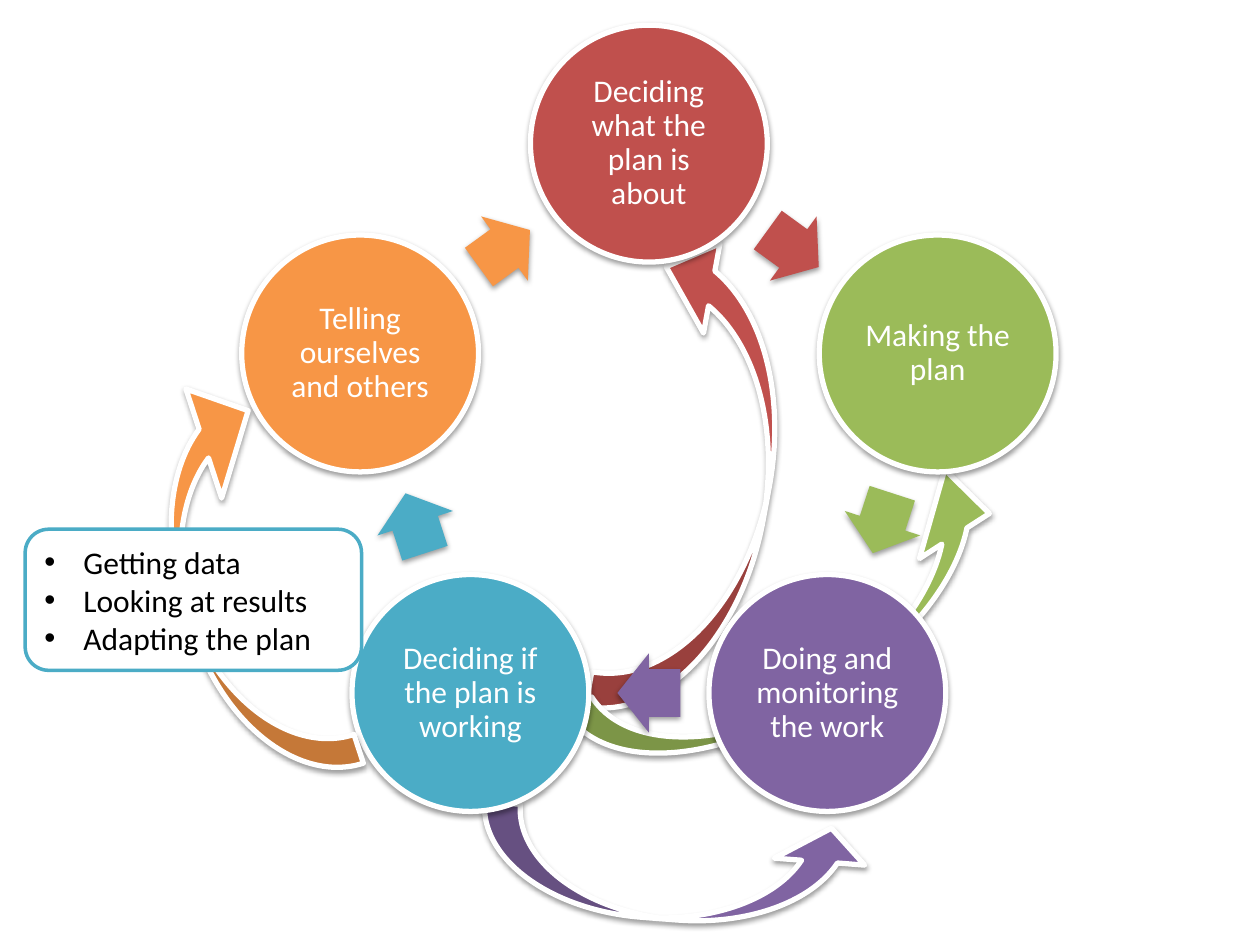
from math import cos, pi, sin

from lxml.etree import SubElement
from pptx import Presentation
from pptx.dml.color import RGBColor
from pptx.enum.shapes import MSO_SHAPE
from pptx.enum.text import MSO_ANCHOR, MSO_AUTO_SIZE, PP_ALIGN
from pptx.oxml.ns import qn
from pptx.util import Inches, Pt

RED, GREEN, PURPLE, TEAL, ORANGE = "C0504D", "9BBB59", "8064A2", "4BACC6", "F79646"
WHITE, BLACK = "FFFFFF", "000000"

# Stages of the cycle, clockwise from the top
STAGES = [
    ("Deciding what the plan is about", RED),
    ("Making the plan", GREEN),
    ("Doing and monitoring the work", PURPLE),
    ("Deciding if the plan is working", TEAL),
    ("Telling ourselves and others", ORANGE),
]
NOTE_ITEMS = ["Getting data", "Looking at results", "Adapting the plan"]

# Feedback arrows: box, rotation, adjustments, colour, mirrored
BACK_ARROWS = [
    ((4.96, 5.33, 0.82, 3.12), 274.4, (0.348, 0.876, 0.331), PURPLE, False),
    ((4.99, 1.83, 1.12, 3.91), 190.4, (0.25, 0.644, 0.345), RED, False),
    ((5.91, 3.07, 0.99, 3.9), 237.2, (0.239, 0.667, 0.49), GREEN, False),
]
RESULTS_ARROW = ((1.42, 2.89, 0.96, 3.4), 161.9, (0.25, 0.95, 0.433), ORANGE, True)

# Ring geometry, in inches
CENTER_X, CENTER_Y, RADIUS = 5.15, 3.55, 2.41
DIAMETER = 1.88
ARROW_LENGTH, ARROW_HEIGHT = 0.5, 0.63
STEP = 360 / len(STAGES)


def color(hex_value):
    return RGBColor.from_string(hex_value)


def add_shadow(shape):
    effects = shape._element.spPr.find(qn("a:effectLst"))
    shadow = SubElement(effects, qn("a:outerShdw"), blurRad=str(Pt(3.1)),
                        dist=str(Pt(1.6)), dir="5400000", rotWithShape="0")
    black = SubElement(shadow, qn("a:srgbClr"), val=BLACK)
    SubElement(black, qn("a:alpha"), val="38000")


def add_shape(slide, kind, box, fill, line=None, width=3, shadow=True):
    shape = slide.shapes.add_shape(kind, *map(Inches, box))
    shape.shadow.inherit = False
    shape.fill.solid()
    shape.fill.fore_color.rgb = color(fill)
    if line:
        shape.line.color.rgb = color(line)
        shape.line.width = Pt(width)
    else:
        shape.line.fill.background()
    if shadow:
        add_shadow(shape)
    return shape


def style_text(paragraph, font_color, **formats):
    for name, value in formats.items():
        setattr(paragraph, name, value)
    for name, value in {"name": "Calibri", "size": Pt(18)}.items():
        setattr(paragraph.font, name, value)
    paragraph.font.color.rgb = color(font_color)


def add_curved_arrow(slide, box, rotation, adjustments, fill, mirrored):
    shape = add_shape(slide, MSO_SHAPE.CURVED_RIGHT_ARROW, box, fill, WHITE)
    shape.rotation = rotation
    for index, value in enumerate(adjustments):
        shape.adjustments[index] = value
    if mirrored:
        shape._element.spPr.xfrm.set("flipH", "1")


def add_stage(slide, center, text, fill):
    x, y = center
    box = (x - DIAMETER / 2, y - DIAMETER / 2, DIAMETER, DIAMETER)
    shape = add_shape(slide, MSO_SHAPE.OVAL, box, fill, WHITE)
    frame = shape.text_frame
    formats = {"word_wrap": True, "vertical_anchor": MSO_ANCHOR.MIDDLE}
    formats |= {f"margin_{side}": Inches(0.07) for side in ("left", "top", "right", "bottom")}
    for name, value in formats.items():
        setattr(frame, name, value)
    frame.text = text
    style_text(frame.paragraphs[0], WHITE, alignment=PP_ALIGN.CENTER, line_spacing=0.9)


def add_step_arrow(slide, start, end, rotation, fill):
    x, y = ((a + b) / 2 for a, b in zip(start, end))
    box = (x - ARROW_LENGTH / 2, y - ARROW_HEIGHT / 2, ARROW_LENGTH, ARROW_HEIGHT)
    shape = add_shape(slide, MSO_SHAPE.RIGHT_ARROW, box, fill)
    shape.adjustments[0] = 0.6
    shape.rotation = rotation


def add_note(slide):
    shape = add_shape(slide, MSO_SHAPE.ROUNDED_RECTANGLE, (0.2, 4.2, 2.67, 1.12),
                      WHITE, TEAL, width=2, shadow=False)
    frame = shape.text_frame
    frame.word_wrap = True
    frame.auto_size = MSO_AUTO_SIZE.SHAPE_TO_FIT_TEXT
    for index, item in enumerate(NOTE_ITEMS):
        paragraph = frame.add_paragraph() if index else frame.paragraphs[0]
        paragraph.text = item
        properties = paragraph._p.get_or_add_pPr()
        properties.set("marL", str(Inches(0.31)))
        properties.set("indent", str(-Inches(0.31)))
        SubElement(properties, qn("a:buFont"), typeface="Arial")
        SubElement(properties, qn("a:buChar"), char="•")
        style_text(paragraph, BLACK, alignment=PP_ALIGN.LEFT)


def main():
    presentation = Presentation()
    presentation.slide_width, presentation.slide_height = Inches(10), Inches(7.5)
    slide = presentation.slides.add_slide(presentation.slide_layouts[6])

    # Feedback arrows behind the ring
    for arrow in BACK_ARROWS:
        add_curved_arrow(slide, *arrow)

    # Ring of stages, each with an arrow to the next
    angles = [2 * pi * index / len(STAGES) for index in range(len(STAGES))]
    centers = [(CENTER_X + RADIUS * sin(a), CENTER_Y - RADIUS * cos(a)) for a in angles]
    for index, (text, fill) in enumerate(STAGES):
        following = centers[(index + 1) % len(STAGES)]
        add_stage(slide, centers[index], text, fill)
        add_step_arrow(slide, centers[index], following, STEP * (index + 0.5), fill)

    # Results arrow and note in front
    add_curved_arrow(slide, *RESULTS_ARROW)
    add_note(slide)

    presentation.save("out.pptx")


if __name__ == "__main__":
    main()
